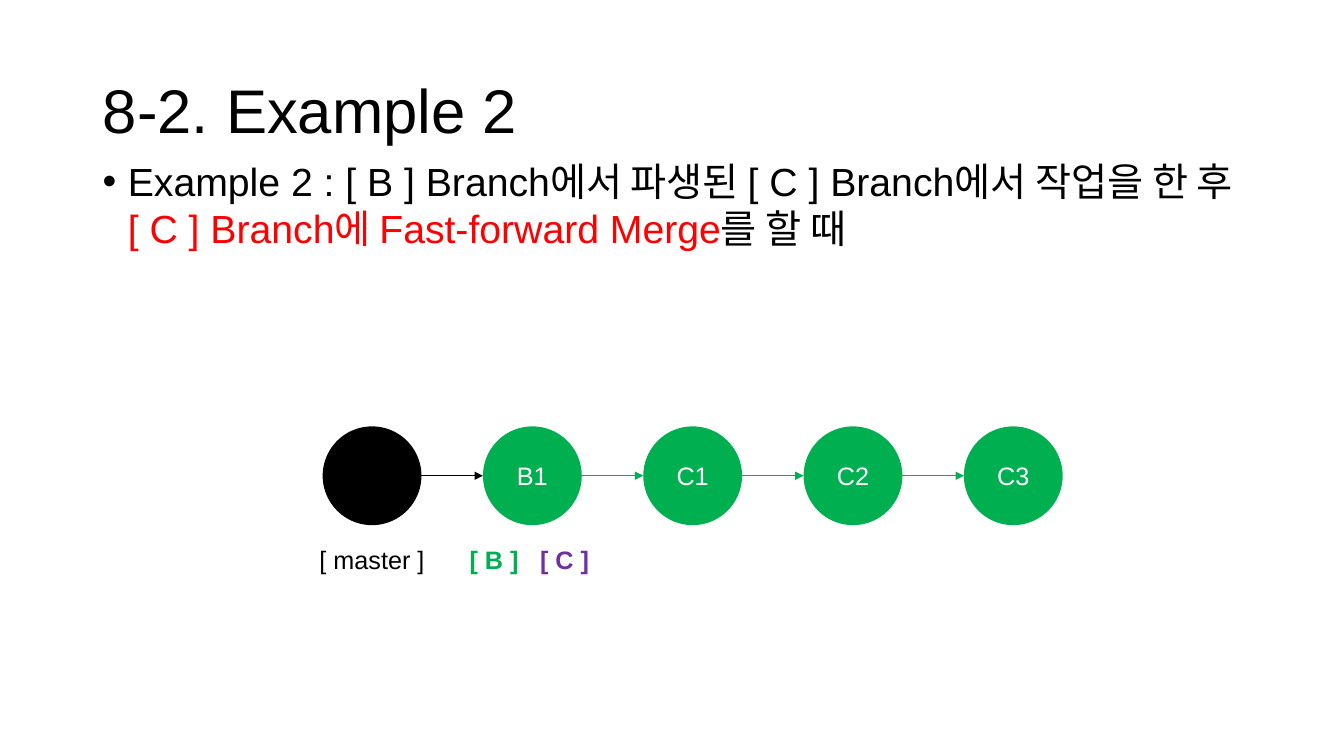
import dataclasses

import pptx
import pptx.dml.color
import pptx.enum.shapes
import pptx.enum.text
import pptx.oxml
import pptx.oxml.ns
import pptx.util

Inches = pptx.util.Inches
Align = pptx.enum.text.PP_ALIGN
Anchor = pptx.enum.text.MSO_ANCHOR


@dataclasses.dataclass(frozen=True)
class Theme:
    font: str = "Arial"
    black: str = "000000"
    white: str = "FFFFFF"
    red: str = "FF0000"
    green: str = "00B050"
    purple: str = "7030A0"
    title_size: int = 44
    body_size: int = 28
    label_size: int = 18
    arrow_width: float = 0.5


THEME = Theme()


def rgb(color):
    return pptx.dml.color.RGBColor.from_string(color)


def add_element(parent, tag, **attributes):
    element = pptx.oxml.parse_xml(f"<a:{tag} {pptx.oxml.ns.nsdecls('a')}/>")
    for name, value in attributes.items():
        element.set(name, value)
    parent.append(element)


def write_text(frame, text, size=THEME.label_size, color=THEME.black, bold=False,
               align=Align.CENTER, anchor=Anchor.TOP, wrap=False):
    """Append text to the frame's paragraph as one formatted span."""
    frame.word_wrap = wrap
    frame.vertical_anchor = anchor
    para = frame.paragraphs[0]
    para.alignment = align
    span = para.add_run()
    span.text = text
    span.font.name = THEME.font
    span.font.size = pptx.util.Pt(size)
    span.font.bold = bold
    span.font.color.rgb = rgb(color)
    return para


def add_title(page, left, top, width, height):
    title = page.shapes.title
    title.left, title.top = Inches(left), Inches(top)
    title.width, title.height = Inches(width), Inches(height)
    para = write_text(title.text_frame, "8-2. Example 2", size=THEME.title_size,
                      align=Align.LEFT, anchor=Anchor.MIDDLE, wrap=True)
    para.line_spacing = 0.9


def add_description(page, left, top, width, height):
    box = page.shapes.add_textbox(Inches(left), Inches(top), Inches(width), Inches(height))
    spans = [
        ("Example 2 : [ B ] Branch에서 파생된 [ C ] Branch에서 작업을 한 후 ", THEME.black),
        ("[ C ] Branch에 Fast-forward Merge", THEME.red),
        ("를 할 때", THEME.black),
    ]
    for text, color in spans:
        para = write_text(box.text_frame, text, size=THEME.body_size, color=color,
                          align=Align.LEFT, wrap=True)
    para.space_before = pptx.util.Pt(10)
    # Hanging bullet
    properties = para._p.get_or_add_pPr()
    properties.set("marL", str(Inches(0.25)))
    properties.set("indent", str(Inches(-0.25)))
    add_element(properties, "buFont", typeface=THEME.font)
    add_element(properties, "buChar", char="•")


def add_commit(page, left, top, size, name, color):
    circle = page.shapes.add_shape(pptx.enum.shapes.MSO_SHAPE.OVAL, Inches(left),
                                   Inches(top), Inches(size), Inches(size))
    circle.shadow.inherit = False
    circle.fill.solid()
    circle.fill.fore_color.rgb = rgb(color)
    circle.line.fill.background()
    if name:
        write_text(circle.text_frame, name, color=THEME.white, anchor=Anchor.MIDDLE)


def add_arrow(page, start, end, middle, color):
    arrow = page.shapes.add_connector(pptx.enum.shapes.MSO_CONNECTOR.STRAIGHT, Inches(start),
                                      Inches(middle), Inches(end), Inches(middle))
    arrow.line.color.rgb = rgb(color)
    arrow.line.width = pptx.util.Pt(THEME.arrow_width)
    add_element(arrow.line._get_or_add_ln(), "tailEnd", type="triangle")
    add_element(arrow._element.spPr, "effectLst")


def add_branch_label(page, left, top, width, height, text, color, bold):
    box = page.shapes.add_textbox(Inches(left), Inches(top), Inches(width), Inches(height))
    write_text(box.text_frame, text, color=color, bold=bold)


def add_commit_graph(page, left, top, width, size):
    commits = [("", THEME.black), ("B1", THEME.green), ("C1", THEME.green),
               ("C2", THEME.green), ("C3", THEME.green)]
    pitch = (width - size) / (len(commits) - 1)

    # Commits, each with an arrow to the next one
    for index, (name, color) in enumerate(commits):
        commit_left = left + index * pitch
        add_commit(page, commit_left, top, size, name, color)
        if index < len(commits) - 1:
            add_arrow(page, commit_left + size, commit_left + pitch, top + size / 2, color)

    # Branch names below: centre measured from the left of the graph
    labels = [
        ("[ master ]", size / 2, 1.66, THEME.black, False),
        ("[ B ]", 1.7, 0.69, THEME.green, True),
        ("[ C ]", 2.4, 0.7, THEME.purple, True),
    ]
    for text, centre, label_width, color, bold in labels:
        add_branch_label(page, left + centre - label_width / 2, top + 1.12,
                         label_width, 0.4, text, color, bold)


def main():
    deck = pptx.Presentation()
    deck.slide_width, deck.slide_height = Inches(13.33), Inches(7.5)
    page = deck.slides.add_slide(deck.slide_layouts.get_by_name("Title Only"))
    add_title(page, 0.92, 0.4, 11.5, 1.45)
    add_description(page, 0.92, 1.51, 11.5, 1.9)
    add_commit_graph(page, 3.2, 4.23, 7.34, 0.98)
    deck.save("out.pptx")


if __name__ == "__main__":
    main()
